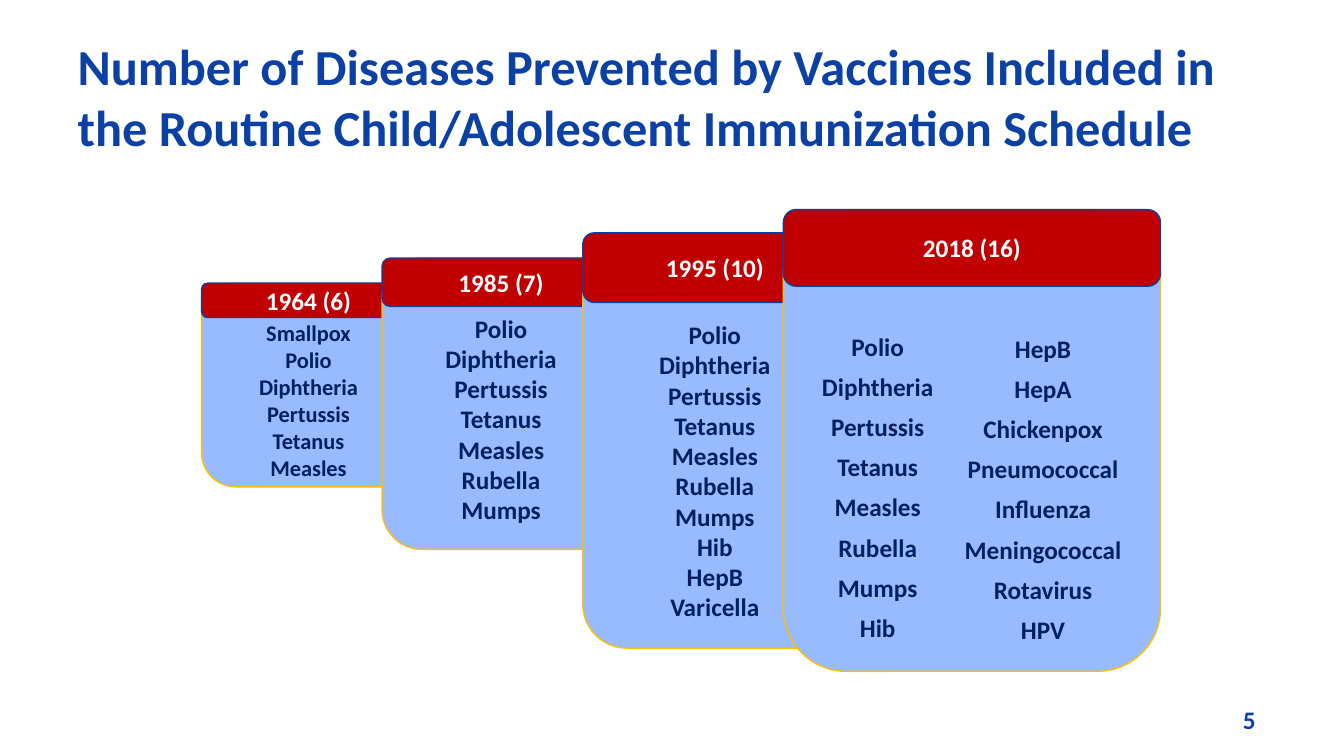
from dataclasses import dataclass

from pptx import Presentation
from pptx.dml.color import RGBColor
from pptx.enum.shapes import MSO_SHAPE
from pptx.enum.text import MSO_ANCHOR, MSO_AUTO_SIZE, PP_ALIGN
from pptx.util import Emu, Pt

ROUND = MSO_SHAPE.ROUNDED_RECTANGLE
MIDDLE, TOP = MSO_ANCHOR.MIDDLE, MSO_ANCHOR.TOP
LEFT, CENTER = PP_ALIGN.LEFT, PP_ALIGN.CENTER
NO_FIT = MSO_AUTO_SIZE.NONE
SCALE = 9144  # EMU per px, 100 px to the inch


@dataclass(frozen=True)
class Theme:
    font: str = "Calibri"
    title: str = "0B41A5"
    blue: str = "0B40A5"
    navy: str = "002060"
    white: str = "FFFFFF"
    red: str = "C00000"
    sky: str = "98BAFF"
    gold: str = "FFC000"
    head_size: int = 36
    text_size: int = 18
    small_size: int = 16


@dataclass(frozen=True)
class Box:
    x: int
    y: int
    w: int
    h: int


@dataclass(frozen=True)
class Card:
    label: str
    box: Box
    head: int  # height of the red header
    names: tuple[str, ...] = ()
    size: int = Theme.text_size
    drop: int = 0  # space kept free above the names


@dataclass(frozen=True)
class Column:
    box: Box
    names: tuple[str, ...]


THEME = Theme()
SHARED = ("Polio", "Diphtheria", "Pertussis", "Tetanus", "Measles")
SEVEN = SHARED + ("Rubella", "Mumps")

CARDS = (
    Card("1964 (6)", Box(200, 281, 212, 202), 34,
         ("Smallpox",) + SHARED, THEME.small_size, 30),
    Card("1985 (7)", Box(379, 256, 236, 289), 48, SEVEN, drop=30),
    Card("1995 (10)", Box(578, 231, 262, 412), 69,
         SEVEN + ("Hib", "HepB", "Varicella"), drop=60),
    Card("2018 (16)", Box(777, 208, 374, 458), 76),
)
COLUMNS = (
    Column(Box(730, 322, 281, 323), SEVEN + ("Hib",)),
    Column(Box(894, 324, 281, 323),
           ("HepB", "HepA", "Chickenpox", "Pneumococcal", "Influenza",
            "Meningococcal", "Rotavirus", "HPV")),
)


def px(n: int) -> Emu:
    return Emu(n * SCALE)


def place(box: Box) -> tuple[Emu, Emu, Emu, Emu]:
    return px(box.x), px(box.y), px(box.w), px(box.h)


def write(frame, lines: tuple[str, ...], size: int, color: str,
          align=CENTER, anchor=TOP, pitch: float = 1.0, after: int = 0) -> None:
    frame.word_wrap = True
    frame.auto_size = NO_FIT
    frame.vertical_anchor = anchor
    for i, line in enumerate(lines):
        para = frame.paragraphs[0] if i == 0 else frame.add_paragraph()
        para.alignment = align
        para.line_spacing = pitch
        para.space_before = Pt(0)
        para.space_after = Pt(after)
        run = para.add_run()
        run.text = line
        font = run.font
        font.name, font.size, font.bold = THEME.font, Pt(size), True
        font.color.rgb = RGBColor.from_string(color)


def panel(slide, box: Box, fill: str, line: str):
    shape = slide.shapes.add_shape(ROUND, *place(box))
    shape.shadow.inherit = False
    shape.fill.solid()
    shape.fill.fore_color.rgb = RGBColor.from_string(fill)
    shape.line.color.rgb = RGBColor.from_string(line)
    shape.line.width = Pt(1)
    return shape


def draw_card(slide, card: Card) -> None:
    box = card.box
    body = panel(slide, box, THEME.sky, THEME.gold)
    if card.names:
        frame = body.text_frame
        frame.margin_top, frame.margin_bottom = px(card.drop), px(0)
        write(frame, card.names, card.size, THEME.navy, anchor=MIDDLE)
    head = panel(slide, Box(box.x, box.y, box.w, card.head),
                 THEME.red, THEME.blue)
    write(head.text_frame, (card.label,), THEME.text_size, THEME.white,
          anchor=MIDDLE)


def draw_column(slide, col: Column) -> None:
    text = slide.shapes.add_textbox(*place(col.box))
    write(text.text_frame, col.names, THEME.text_size, THEME.navy,
          pitch=1.05, after=6)


def main() -> None:
    deck = Presentation()
    deck.slide_width, deck.slide_height = px(1333), px(750)
    slide = deck.slides.add_slide(deck.slide_layouts[5])

    # Title
    title = slide.shapes.title
    title.left, title.top, title.width, title.height = place(
        Box(67, 30, 1200, 130))
    write(title.text_frame,
          ("Number of Diseases Prevented by Vaccines Included in the "
           "Routine Child/Adolescent Immunization Schedule",),
          THEME.head_size, THEME.title, LEFT, MIDDLE)

    # Overlapping cards, oldest at the back
    for card in CARDS:
        draw_card(slide, card)

    # Two lists on the newest card
    for col in COLUMNS:
        draw_column(slide, col)

    # Page number
    page = slide.shapes.add_textbox(*place(Box(1223, 694, 80, 40)))
    write(page.text_frame, ("5",), THEME.text_size, THEME.blue, LEFT)

    deck.save("out.pptx")


if __name__ == "__main__":
    main()
